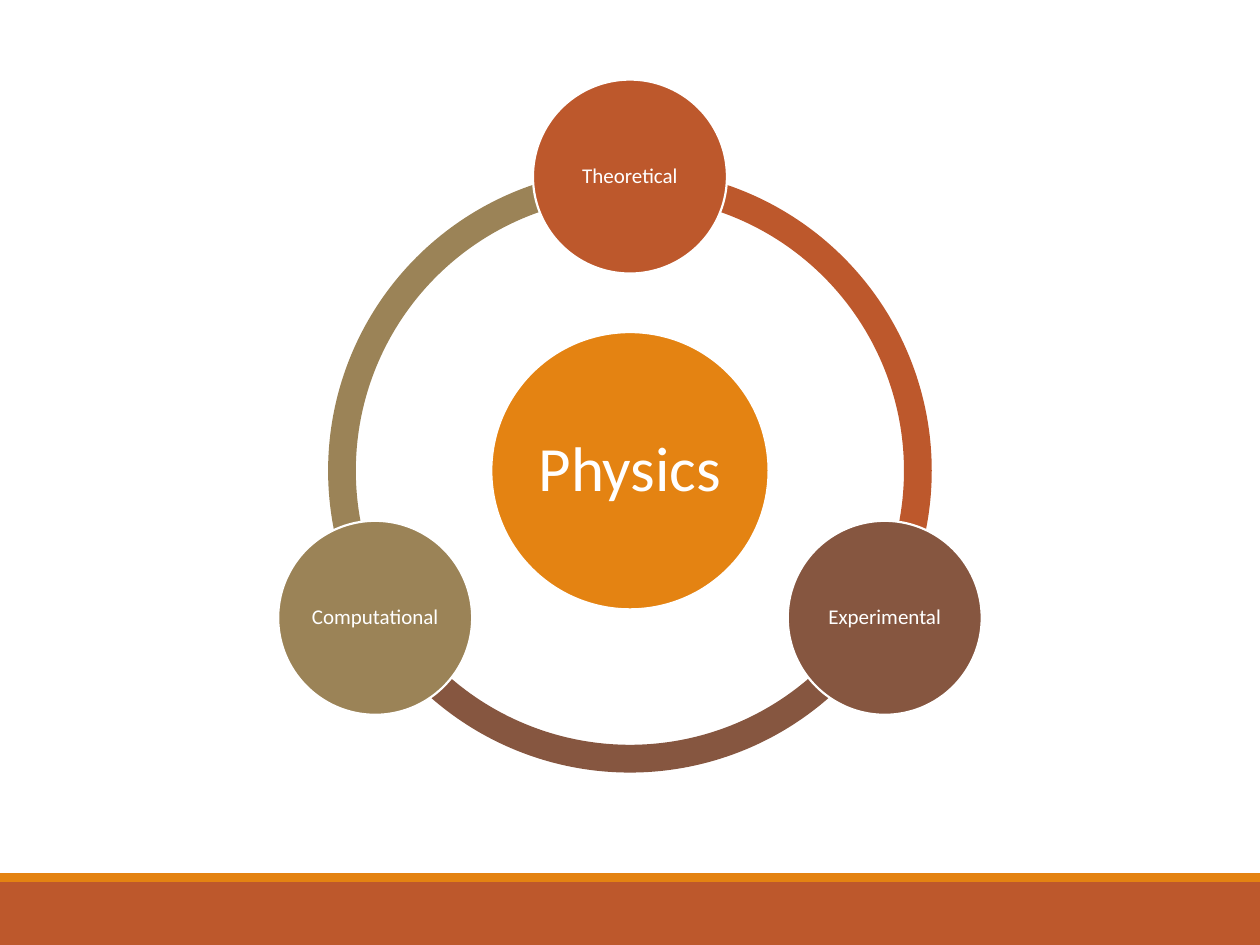
from dataclasses import dataclass
from math import cos, radians, sin

from pptx import Presentation
from pptx.dml.color import RGBColor
from pptx.enum.shapes import MSO_SHAPE as Preset
from pptx.enum.text import MSO_ANCHOR as Anchor, PP_ALIGN as Align
from pptx.shapes.autoshape import Shape
from pptx.slide import Slide
from pptx.util import Cm, Pt

WIDTH, HEIGHT = 25.4, 19.05
CENTER_X, CENTER_Y = WIDTH / 2, 9.49
ORBIT_RADIUS = 5.93
RING_SIZE, RING_THICKNESS = 12.17, 0.046
HUB_SIZE, BRANCH_SIZE = 5.59, 3.91
ORANGE, RUST, BROWN, TAN, WHITE = "E48312", "BD582C", "865640", "9B8357", "FFFFFF"


@dataclass
class Branch:
    name: str
    color: str
    angle: int  # degrees clockwise from the right


BRANCHES = [
    Branch("Theoretical", RUST, 270),
    Branch("Experimental", BROWN, 30),
    Branch("Computational", TAN, 150),
]
ARC_SPAN = 360 // len(BRANCHES)


def rgb(color: str) -> RGBColor:
    return RGBColor.from_string(color)


def add_filled(slide: Slide, preset: Preset, left: float, top: float,
               width: float, height: float, color: str) -> Shape:
    """Add a preset shape without outline or shadow; lengths in cm."""
    shape = slide.shapes.add_shape(preset, Cm(left), Cm(top), Cm(width), Cm(height))
    shape.shadow.inherit = False
    shape.fill.solid()
    shape.fill.fore_color.rgb = rgb(color)
    shape.line.fill.background()
    return shape


def add_centered(slide: Slide, preset: Preset, x: float, y: float,
                 size: float, color: str) -> Shape:
    return add_filled(slide, preset, x - size / 2, y - size / 2, size, size, color)


def add_arc(slide: Slide, branch: Branch) -> None:
    """Draw the ring segment running clockwise from a branch to the next one."""
    arc = add_centered(slide, Preset.BLOCK_ARC, CENTER_X, CENTER_Y, RING_SIZE, branch.color)
    end = (branch.angle + ARC_SPAN) % 360
    # Angles are stored in 60000ths of a degree, adjustments in 100000ths.
    arc.adjustments[0] = branch.angle * 0.6
    arc.adjustments[1] = end * 0.6
    arc.adjustments[2] = RING_THICKNESS


def add_circle(slide: Slide, x: float, y: float, size: float, color: str,
               text: str, points: int, inset: float) -> None:
    circle = add_centered(slide, Preset.OVAL, x, y, size, color)
    circle.line.color.rgb = rgb(WHITE)
    circle.line.width = Pt(1.25)
    frame = circle.text_frame
    frame.word_wrap = True
    frame.vertical_anchor = Anchor.MIDDLE
    frame.margin_left = frame.margin_right = Cm(inset)
    frame.margin_top = frame.margin_bottom = Cm(inset)
    para = frame.paragraphs[0]
    para.alignment = Align.CENTER
    para.line_spacing = 0.9
    span = para.add_run()
    span.text = text
    span.font.name = "Calibri"
    span.font.size = Pt(points)
    span.font.color.rgb = rgb(WHITE)


def main() -> None:
    deck = Presentation()
    deck.slide_width, deck.slide_height = Cm(WIDTH), Cm(HEIGHT)
    slide = deck.slides.add_slide(deck.slide_layouts[6])

    add_filled(slide, Preset.RECTANGLE, 0, 17.78, WIDTH, 1.27, RUST)
    add_filled(slide, Preset.RECTANGLE, 0, 17.6, WIDTH, 0.18, ORANGE)

    for branch in reversed(BRANCHES):
        add_arc(slide, branch)

    add_circle(slide, CENTER_X, CENTER_Y, HUB_SIZE, ORANGE, "Physics", 36, 0.13)
    for branch in BRANCHES:
        x = CENTER_X + ORBIT_RADIUS * cos(radians(branch.angle))
        y = CENTER_Y + ORBIT_RADIUS * sin(radians(branch.angle))
        add_circle(slide, x, y, BRANCH_SIZE, branch.color, branch.name, 12, 0.05)

    deck.save("out.pptx")


if __name__ == "__main__":
    main()
